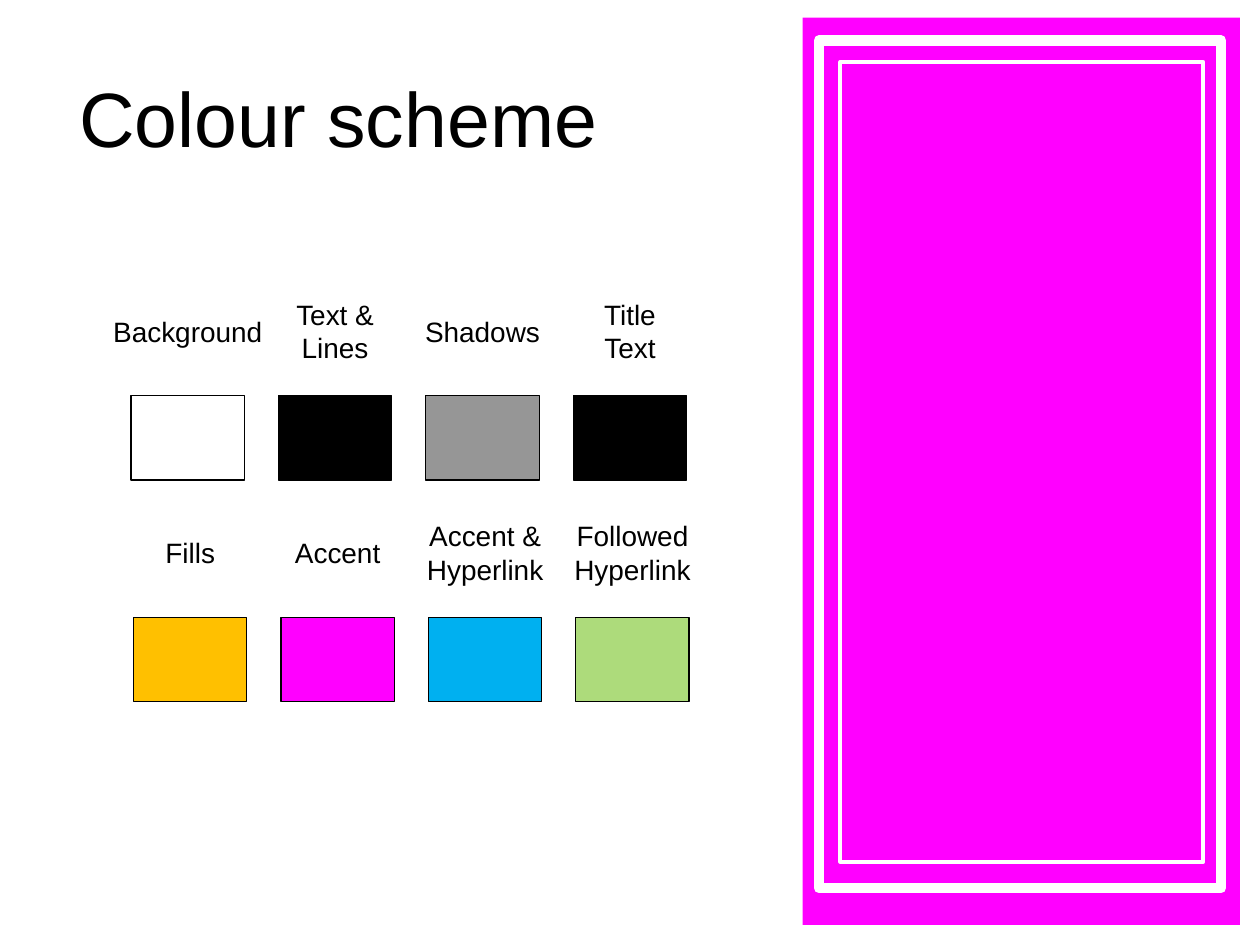
from pptx import Presentation
from pptx.dml.color import RGBColor
from pptx.enum import shapes, text
from pptx.util import Inches, Pt

COLOURS = {
    "background": "FFFFFF",
    "text": "000000",
    "shadows": "969696",
    "title": "000000",
    "fills": "FFC000",
    "accent": "FF00FF",
    "hyperlink": "00B0F0",
    "followed": "ADDB7B",
}
FONT = "Arial"
SWATCH_WIDTH, SWATCH_HEIGHT = 0.9, 0.67
COLUMN_STEP = 1.17
LABEL_RISE = 0.51  # from label centre down to swatch top

# Left, top, then (label, label width, colour); \n is a paragraph, \v a line break
ROWS = [
    (1.04, 3.14, [
        ("Background", 1.4, "background"),
        ("Text &\nLines", 0.86, "text"),
        ("Shadows", 1.13, "shadows"),
        ("Title\vText", 0.65, "title"),
    ]),
    (1.06, 4.9, [
        ("Fills", 0.62, "fills"),
        ("Accent", 0.9, "accent"),
        ("Accent &\nHyperlink", 1.15, "hyperlink"),
        ("Followed\nHyperlink", 1.15, "followed"),
    ]),
]


def rgb(name):
    return RGBColor.from_string(COLOURS[name])


def style_font(font, size):
    font.name = FONT
    font.size = Pt(size)
    font.color.rgb = rgb("text")


def add_rectangle(slide, box, fill=None, line=None, line_width=0.75):
    shape = slide.shapes.add_shape(
        shapes.MSO_SHAPE.RECTANGLE, *(Inches(length) for length in box))
    shape.shadow.inherit = False
    if fill:
        shape.fill.solid()
        shape.fill.fore_color.rgb = rgb(fill)
    else:
        shape.fill.background()
    if line:
        shape.line.color.rgb = rgb(line)
        shape.line.width = Pt(line_width)
    else:
        shape.line.fill.background()


def add_label(slide, wording, centre_x, centre_y, width):
    height = 0.64 if len(wording.splitlines()) > 1 else 0.37
    box = slide.shapes.add_textbox(
        Inches(centre_x - width / 2), Inches(centre_y - height / 2),
        Inches(width), Inches(height))
    frame = box.text_frame
    frame.word_wrap = False
    frame.auto_size = text.MSO_AUTO_SIZE.SHAPE_TO_FIT_TEXT
    frame.text = wording
    for paragraph in frame.paragraphs:
        paragraph.alignment = text.PP_ALIGN.CENTER
        style_font(paragraph.font, 16)


def set_title(slide, wording):
    title = slide.shapes.title
    title.left, title.top = Inches(0.53), Inches(0.3)
    title.width, title.height = Inches(8.97), Inches(1.25)
    title.text_frame.text = wording
    title.text_frame.vertical_anchor = text.MSO_ANCHOR.MIDDLE
    paragraph = title.text_frame.paragraphs[0]
    paragraph.alignment = text.PP_ALIGN.LEFT
    style_font(paragraph.font, 44)


def main():
    presentation = Presentation()
    presentation.slide_width, presentation.slide_height = Inches(10), Inches(7.5)
    slide = presentation.slides.add_slide(presentation.slide_layouts[5])
    slide.background.fill.solid()
    slide.background.fill.fore_color.rgb = rgb("background")
    set_title(slide, "Colour scheme")

    # Side panel with its double frame
    add_rectangle(slide, (6.37, 0.14, 3.47, 7.2), fill="accent")
    add_rectangle(slide, (6.5, 0.32, 3.19, 6.73), line="background", line_width=6)
    add_rectangle(slide, (6.67, 0.49, 2.88, 6.35), line="background", line_width=2.25)

    # Swatches, each with its label centred above
    for row_left, top, swatches in ROWS:
        for column, (wording, label_width, colour) in enumerate(swatches):
            left = row_left + column * COLUMN_STEP
            add_rectangle(slide, (left, top, SWATCH_WIDTH, SWATCH_HEIGHT),
                          fill=colour, line="text")
            add_label(slide, wording, left + SWATCH_WIDTH / 2, top - LABEL_RISE,
                      label_width)

    presentation.save("out.pptx")


if __name__ == "__main__":
    main()
